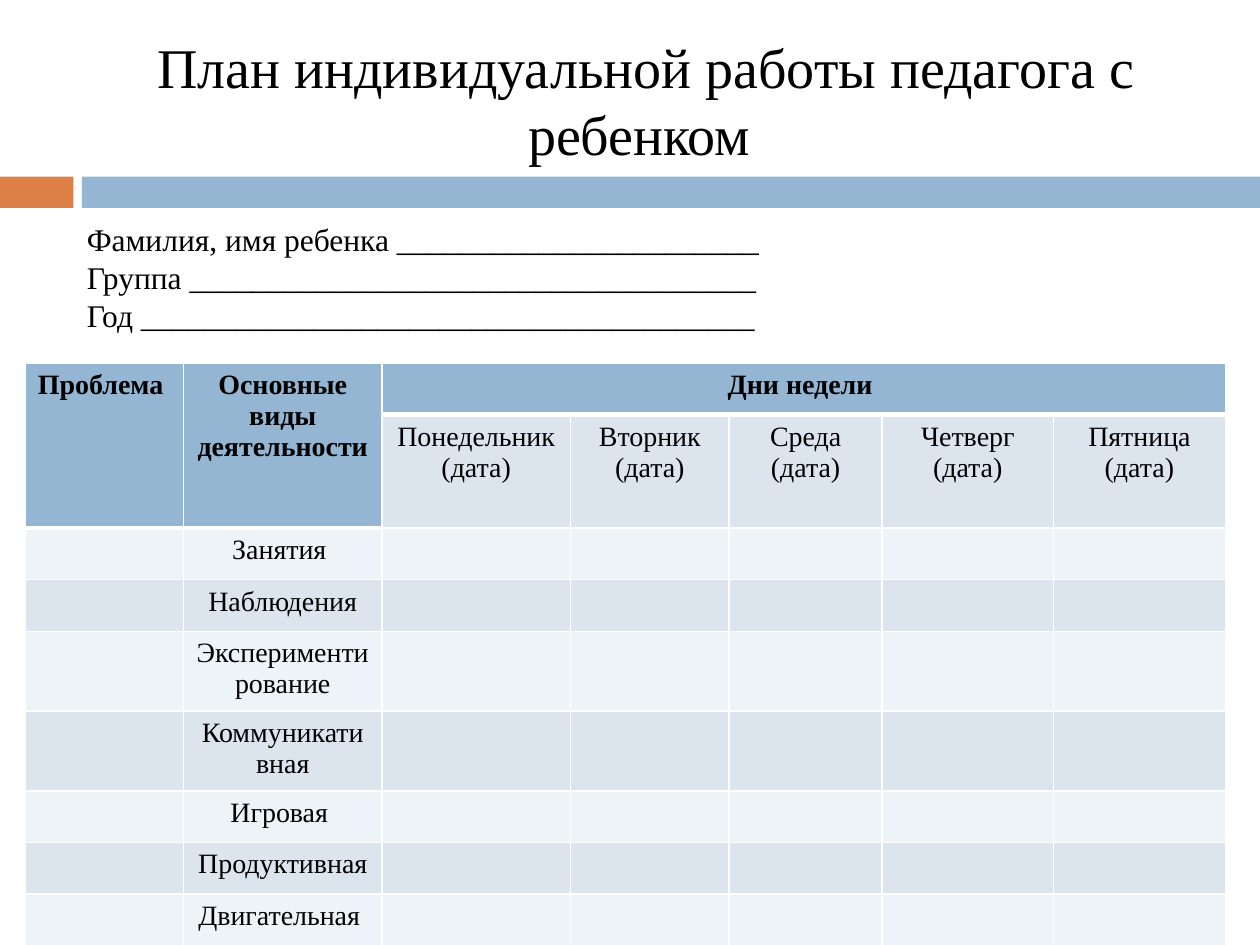
from lxml.etree import SubElement as Sub
from pptx import Presentation
from pptx.dml.color import RGBColor as Rgb
from pptx.enum.shapes import MSO_SHAPE as Shape
from pptx.enum.text import MSO_ANCHOR as Anchor, PP_ALIGN as Align
from pptx.oxml.ns import qn
from pptx.util import Cm, Pt

FONT = "Times New Roman"
BLUE, ORANGE, DARK, LIGHT = "94B6D2", "DD8047", "DCE5EE", "EEF3F7"
TITLE = "План индивидуальной работы педагога с ребенком "
FIELDS = [("Фамилия, имя ребенка", 23), ("Группа", 36), ("Год", 39)]
HEADS = ["Проблема ", "Основные виды деятельности ", "Дни недели "]
DAYS = ["Понедельник", "Вторник", "Среда", "Четверг", "Пятница"]
KINDS = ["Занятия ", "Наблюдения", "Экспериментирование", "Коммуникативная",
         "Игровая ", "Продуктивная ", "Двигательная "]
WIDTHS = [3.2, 4, 3.8, 3.2, 3.08, 3.46, 3.46]
BARS = [(0, 1.48, ORANGE), (1.65, 23.75, BLUE)]
ROW = 1.04


def color(text):
    return Rgb.from_string(text)


def style(para, size, align=Align.LEFT, bold=False):
    para.alignment = align
    font = para.font
    font.name, font.size, font.bold = FONT, Pt(size), bold
    font.color.rgb = color("000000")


def add_text(slide, box, lines, size, align, anchor):
    frame = slide.shapes.add_textbox(*map(Cm, box)).text_frame
    frame.word_wrap, frame.vertical_anchor = True, anchor
    frame.text = "\n".join(lines)
    for para in frame.paragraphs:
        style(para, size, align)


def edge(cell, base):
    props = cell._tc.get_or_add_tcPr()
    for side, width in zip("LRTB", (1, 1, 1, base)):
        line = Sub(props, qn(f"a:ln{side}"), w=str(Pt(width)))
        fill = Sub(line, qn("a:solidFill"))
        Sub(fill, qn("a:srgbClr"), val="FFFFFF")


def add_plan(slide):
    days = [f"{day} (дата)" for day in DAYS]
    rows = [HEADS + [""] * 4, ["", ""] + days]
    rows += [["", kind] + [""] * 5 for kind in KINDS]
    size = (Cm(0.5), Cm(7.32), Cm(sum(WIDTHS)), Cm(ROW * len(rows)))
    table = slide.shapes.add_table(len(rows), len(WIDTHS), *size).table
    for col, width in zip(table.columns, WIDTHS):
        col.width = Cm(width)
    for r, row in enumerate(rows):
        table.rows[r].height = Cm(ROW)
        for c, text in enumerate(row):
            cell = table.cell(r, c)
            head = r == 0 or (r == 1 and c < 2)
            cell.text = text
            style(cell.text_frame.paragraphs[0], 16, Align.CENTER, head)
            edge(cell, 3 if head else 1)
            cell.fill.solid()
            tint = BLUE if head else DARK if r % 2 else LIGHT
            cell.fill.fore_color.rgb = color(tint)
    for c in (0, 1):
        table.cell(0, c).merge(table.cell(1, c))
    table.cell(0, 2).merge(table.cell(0, 6))


def main():
    """Build the weekly plan slide."""
    deck = Presentation()
    deck.slide_width, deck.slide_height = Cm(25.4), Cm(19.05)
    slide = deck.slides.add_slide(deck.slide_layouts[6])
    for left, width, tint in BARS:
        bar = slide.shapes.add_shape(
            Shape.RECTANGLE, Cm(left), Cm(3.56), Cm(width), Cm(0.63))
        bar.shadow.inherit = False
        bar.fill.solid()
        bar.fill.fore_color.rgb = color(tint)
        bar.line.fill.background()
    add_text(slide, (1.7, 0.64, 22.66, 2.74), [TITLE], 32,
             Align.CENTER, Anchor.MIDDLE)
    add_plan(slide)
    lines = [f"{name} {'_' * count}" for name, count in FIELDS]
    add_text(slide, (1.5, 4.32, 14.15, 2.57), lines, 18,
             Align.LEFT, Anchor.TOP)
    deck.save("out.pptx")


if __name__ == "__main__":
    main()
